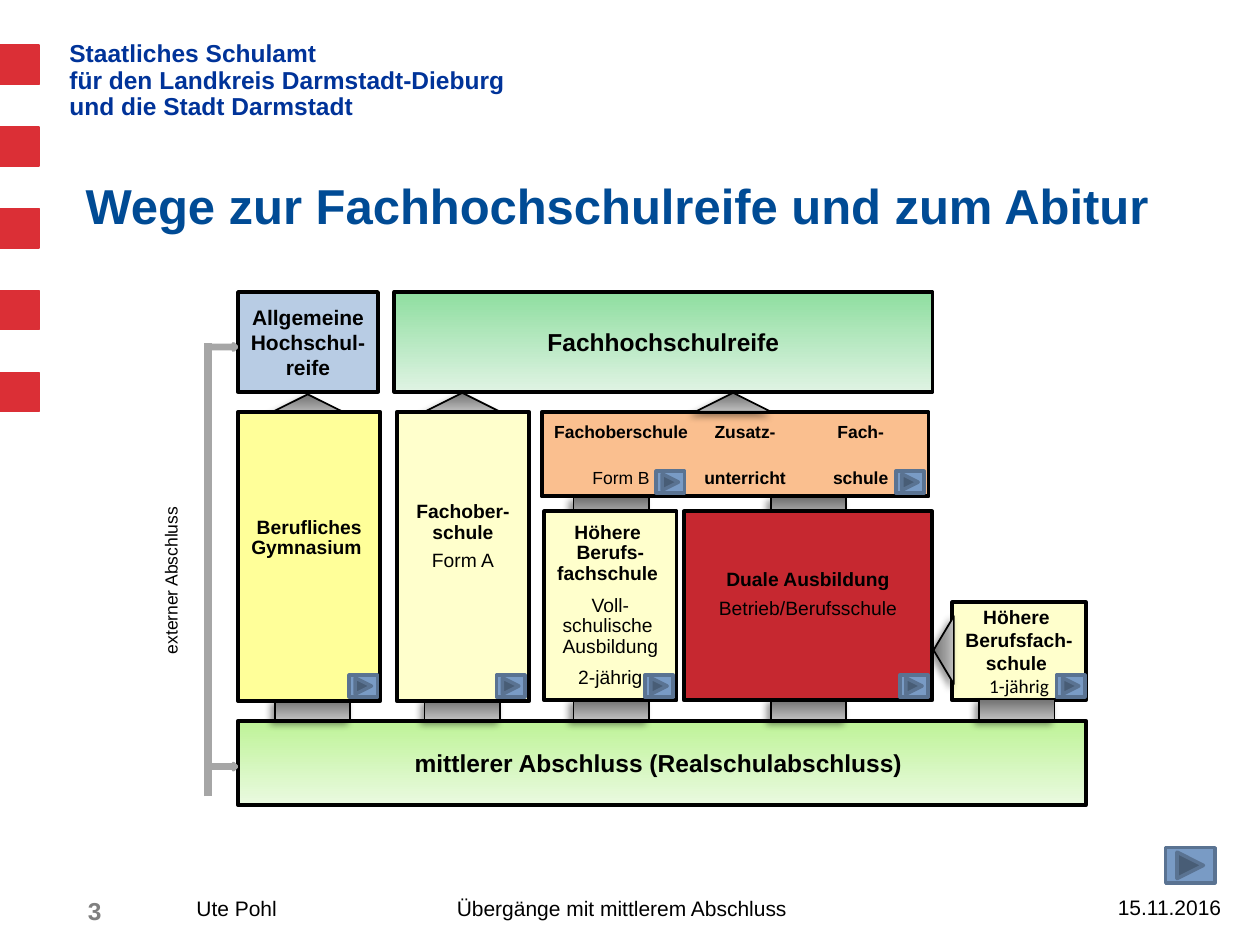
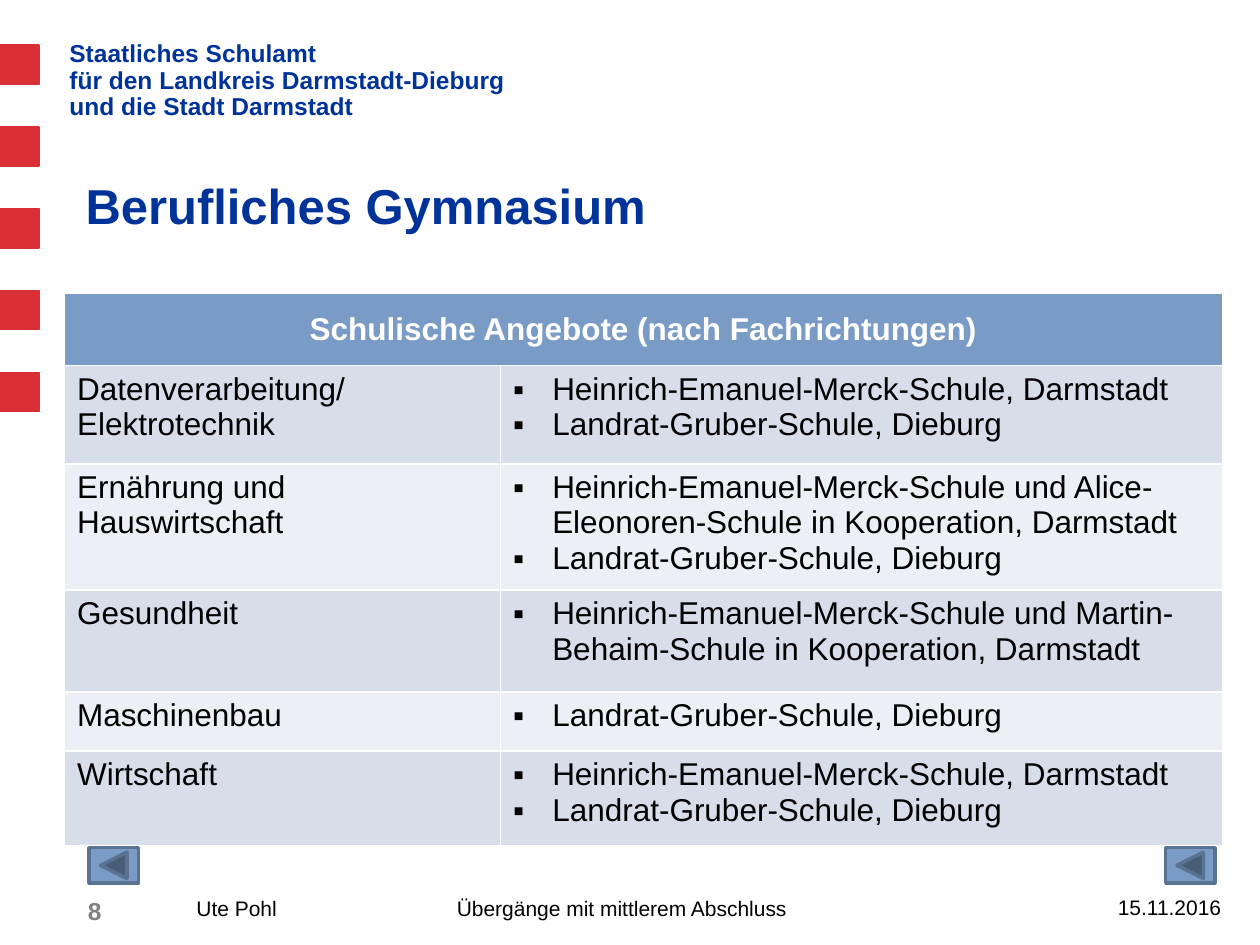
"""Build two slides on school paths to higher degrees."""
import pptx
import pptx.util
import pptx.dml.color
import pptx.enum.shapes
import pptx.enum.text
import lxml.etree

Cm, Pt = pptx.util.Cm, pptx.util.Pt
SHAPE = pptx.enum.shapes.MSO_SHAPE
ALIGN = pptx.enum.text.PP_ALIGN
NS = "{http://schemas.openxmlformats.org/drawingml/2006/main}"
HUES = {
    "red": "DB2F36", "navy": "003399", "blue": "004B95", "black": "000000",
    "white": "FFFFFF", "grey": "808080", "rail": "A6A6A6", "dark": "717171",
    "light": "BFBFBF", "lime": "BEF397", "mist": "EAFAE0", "green": "8FDEA0",
    "mint": "DFF3E3", "sky": "B8CCE4", "peach": "FABF8F", "cream": "FFFFCC",
    "lemon": "FFFF99", "brick": "C62830", "steel": "799BC5", "slate": "5A7392",
    "odd": "D7DEEA", "even": "ECEFF5",
}
RGB = {name: pptx.dml.color.RGBColor.from_string(hue) for name, hue in HUES.items()}


def write(frame, text, size=11, hue="black", bold=False, font="Arial", align=ALIGN.LEFT,
          lead=None, before=None, tabs=(), mark=None, par=None):
    if par is None:
        par = frame.paragraphs[0]
        if par.runs:
            par = frame.add_paragraph()
        par.alignment = align
        if lead:
            par.line_spacing = lead
        if before:
            par.space_before = Pt(before)
        props = par._p.get_or_add_pPr()
        if mark:
            props.set("marL", str(Cm(0.79)))
            props.set("indent", str(Cm(-0.79)))
            lxml.etree.SubElement(props, NS + "buFont", typeface="Arial")
            lxml.etree.SubElement(props, NS + "buChar", char=mark)
        if tabs:
            stops = lxml.etree.SubElement(props, NS + "tabLst")
            for place, kind in tabs:
                lxml.etree.SubElement(stops, NS + "tab", pos=str(Cm(place)), algn=kind)
    run = par.add_run()
    run.text = text
    run.font.name, run.font.size, run.font.bold = font, Pt(size), bold
    run.font.color.rgb = RGB[hue]
    return par


def draw(slide, kind, box, fill, line="black", width=2.25, fade=None, shade=False):
    shape = slide.shapes.add_shape(kind, *map(Cm, box))
    shape.shadow.inherit = False
    if fade:
        shape.fill.gradient()
        shape.fill.gradient_angle = 270
        for stop, hue in zip(shape.fill.gradient_stops, (fill, fade)):
            stop.color.rgb = RGB[hue]
    else:
        shape.fill.solid()
        shape.fill.fore_color.rgb = RGB[fill]
    shape.line.color.rgb = RGB[line]
    shape.line.width = Pt(width)
    if shade:
        glow = lxml.etree.SubElement(
            shape._element.spPr.find(NS + "effectLst"), NS + "outerShdw",
            blurRad=str(Pt(4)), dist=str(Pt(3)), dir="8100000", rotWithShape="0")
        tone = lxml.etree.SubElement(glow, NS + "srgbClr", val=HUES["black"])
        lxml.etree.SubElement(tone, NS + "alpha", val="40000")
    return shape


deck = pptx.Presentation()
deck.slide_width, deck.slide_height = Cm(25.4), Cm(19.05)

pages = []
for title, hue, number in (("Wege zur Fachhochschulreife und zum Abitur", "blue", "3"),
                           ("Berufliches Gymnasium", "navy", "8")):
    slide = deck.slides.add_slide(deck.slide_layouts[5])
    pages.append(slide)
    for i in range(5):
        draw(slide, SHAPE.RECTANGLE, (0, 0.91 + 1.65 * i, 0.79, 0.79), "red", "red", 0.75)

    head = slide.shapes.add_textbox(Cm(1.4), Cm(0.71), Cm(20.4), Cm(1.88)).text_frame
    head.word_wrap = True
    head.margin_left = head.margin_right = 0
    for text in ("Staatliches Schulamt", "für den Landkreis Darmstadt-Dieburg",
                 "und die Stadt Darmstadt"):
        write(head, text, size=14, hue="navy", bold=True, lead=0.9)

    name = slide.shapes.title
    name.left, name.top, name.width, name.height = map(Cm, (1.47, 2.49, 23.42, 2.24))
    frame = name.text_frame
    frame.auto_size = pptx.enum.text.MSO_AUTO_SIZE.NONE
    frame.vertical_anchor = pptx.enum.text.MSO_ANCHOR.BOTTOM
    frame.margin_top = frame.margin_bottom = 0
    write(frame, title, size=28, hue=hue, bold=True)

    for box, text, form in (
            ((20.5, 17.91, 4.37, 0.81), "15.11.2016", dict(size=12, align=ALIGN.RIGHT)),
            ((3.71, 17.93, 16.61, 0.81), "Ute Pohl\tÜbergänge mit mittlerem Abschluss",
             dict(size=12, tabs=[(5.25, "l")])),
            ((1.52, 17.93, 1.96, 0.84), number, dict(size=14, hue="grey", bold=True))):
        foot = slide.shapes.add_textbox(*map(Cm, box)).text_frame
        foot.word_wrap = True
        write(foot, text, **form)

paths, offer = pages
strong = dict(bold=True, align=ALIGN.CENTER)
plain = dict(align=ALIGN.CENTER)
large = dict(strong, size=14)

for box, fill, fade, lines in (
        ((4.8, 14.53, 17.09, 1.7), "lime", "mist",
         [("mittlerer Abschluss (Realschulabschluss) ", large)]),
        ((19.2, 12.14, 2.69, 1.98), "cream", None,
         [("Höhere ", strong), ("Berufsfach-schule ", strong),
          ("1-jährig", dict(plain, font="Calibri"))]),
        ((7.95, 5.89, 10.85, 2.01), "green", "mint", [("Fachhochschulreife", large)]),
        ((4.8, 5.89, 2.82, 2.01), "sky", None,
         [("Allgemeine Hochschul-reife", dict(strong, size=12))])):
    block = draw(paths, SHAPE.RECTANGLE, box, fill, fade=fade)
    for text, form in lines:
        write(block.text_frame, text, **form)

block = draw(paths, SHAPE.RECTANGLE, (10.92, 8.31, 7.8, 1.7), "peach")
frame = block.text_frame
frame.margin_left = frame.margin_right = 0
stops = [(1.6, "ctr"), (4.1, "ctr"), (6.43, "ctr")]
write(frame, "\tFachoberschule\tZusatz-\tFach-", size=10, bold=True, tabs=stops)
row = write(frame, "\tForm B", size=10, tabs=stops, before=14.5)
write(frame, "\tunterricht\tschule", size=10, bold=True, par=row)

grey = dict(fill="dark", fade="light", width=1, shade=True)
for left, top in ((5.54, 14.1), (8.56, 14.1), (11.56, 14.1), (15.54, 14.1), (19.74, 14.1),
                  (11.56, 10.03), (15.54, 10.03)):
    draw(paths, SHAPE.RECTANGLE, (left, top, 1.52, 0.41), **grey)
for box, turn in (((5.38, 7.95, 1.65, 0.41), 0), ((8.56, 7.92, 1.52, 0.38), 0),
                  ((14.02, 7.92, 1.52, 0.38), 0), ((18.34, 12.9, 1.37, 0.41), 270)):
    draw(paths, SHAPE.ISOSCELES_TRIANGLE, box, **grey).rotation = turn

rail = paths.shapes.add_connector(pptx.enum.shapes.MSO_CONNECTOR.STRAIGHT,
                                  Cm(4.19), Cm(16.05), Cm(4.19), Cm(6.91))
rail.line.color.rgb = RGB["rail"]
rail.line.width = Pt(4.5)
lxml.etree.SubElement(rail._element.spPr, NS + "effectLst")
for top in (6.93, 15.39):
    draw(paths, SHAPE.RIGHT_ARROW, (4.24, top, 0.53, 0.13), "rail", "rail", 2)
label = paths.shapes.add_textbox(Cm(1.63), Cm(11.07), Cm(3.84), Cm(0.89))
label.rotation = 270
label.text_frame.word_wrap = True
write(label.text_frame, "externer Abschluss", size=10)

for box, fill, base, lines in (
        ((8, 8.31, 2.67, 5.82), "cream", 0.92,
         [("Fachober-schule", strong), ("Form A", dict(plain, before=4.6))]),
        ((4.8, 8.31, 2.87, 5.82), "lemon", 0.86, [("Berufliches Gymnasium ", strong)]),
        ((10.97, 10.31, 2.67, 3.81), "cream", 0.13,
         [("Höhere ", strong), ("Berufs-fachschule ", strong),
          ("Voll-schulische ", dict(plain, before=6)), ("Ausbildung", plain),
          ("2-jährig", dict(plain, before=6))]),
        ((13.79, 10.31, 5, 3.81), "brick", 0.56,
         [("Duale Ausbildung", strong), ("Betrieb/Berufsschule", dict(plain, before=4.6))])):
    frame = draw(paths, SHAPE.RECTANGLE, box, fill).text_frame
    frame.margin_bottom = Cm(base)
    for text, form in lines:
        write(frame, text, lead=0.9, **form)

NEXT, BACK = SHAPE.ACTION_BUTTON_FORWARD_OR_NEXT, SHAPE.ACTION_BUTTON_BACK_OR_PREVIOUS
small, big = (0.57, 0.44), (0.99, 0.71)
for slide, kind, spot, size in (
        *((paths, NEXT, (left, 13.61), small) for left in (7.04, 10.01, 13, 18.14, 21.3)),
        *((paths, NEXT, (left, 9.5), small) for left in (13.23, 18.06)),
        (paths, NEXT, (23.5, 17.09), big),
        *((offer, BACK, (left, 17.09), big) for left in (23.5, 1.8))):
    draw(slide, kind, spot + size, "steel", "slate", 2)

merck = "Heinrich-Emanuel-Merck-Schule"
gruber = "Landrat-Gruber-Schule, Dieburg"
rows = (
    ("Datenverarbeitung/ Elektrotechnik", 1.98, [merck + ", Darmstadt", gruber]),
    ("Ernährung und Hauswirtschaft", 1.9,
     [merck + " und Alice-Eleonoren-Schule in Kooperation, Darmstadt", gruber]),
    ("Gesundheit", 2.06, [merck + " und Martin-Behaim-Schule in Kooperation, Darmstadt"]),
    ("Maschinenbau", 1.19, [gruber]),
    ("Wirtschaft", 1.9, [merck + ", Darmstadt", gruber]),
)
table = offer.shapes.add_table(len(rows) + 1, 2, Cm(1.3), Cm(5.92), Cm(23.34), Cm(10.48)).table
table.columns[0].width, table.columns[1].width = Cm(8.79), Cm(14.55)
table.rows[0].height = Cm(1.45)
top = table.cell(0, 0)
top.merge(table.cell(0, 1))
top.vertical_anchor = pptx.enum.text.MSO_ANCHOR.MIDDLE
write(top.text_frame, "Schulische Angebote (nach Fachrichtungen)", size=18, hue="white", **strong)
for i, (field, height, schools) in enumerate(rows, 1):
    table.rows[i].height = Cm(height)
    write(table.cell(i, 0).text_frame, field, size=18)
    for school in schools:
        write(table.cell(i, 1).text_frame, school, size=18, mark="▪")
for i, row in enumerate(table.rows):
    for cell in row.cells:
        cell.fill.solid()
        cell.fill.fore_color.rgb = RGB["steel" if i == 0 else "odd" if i % 2 else "even"]

deck.save("out.pptx")
